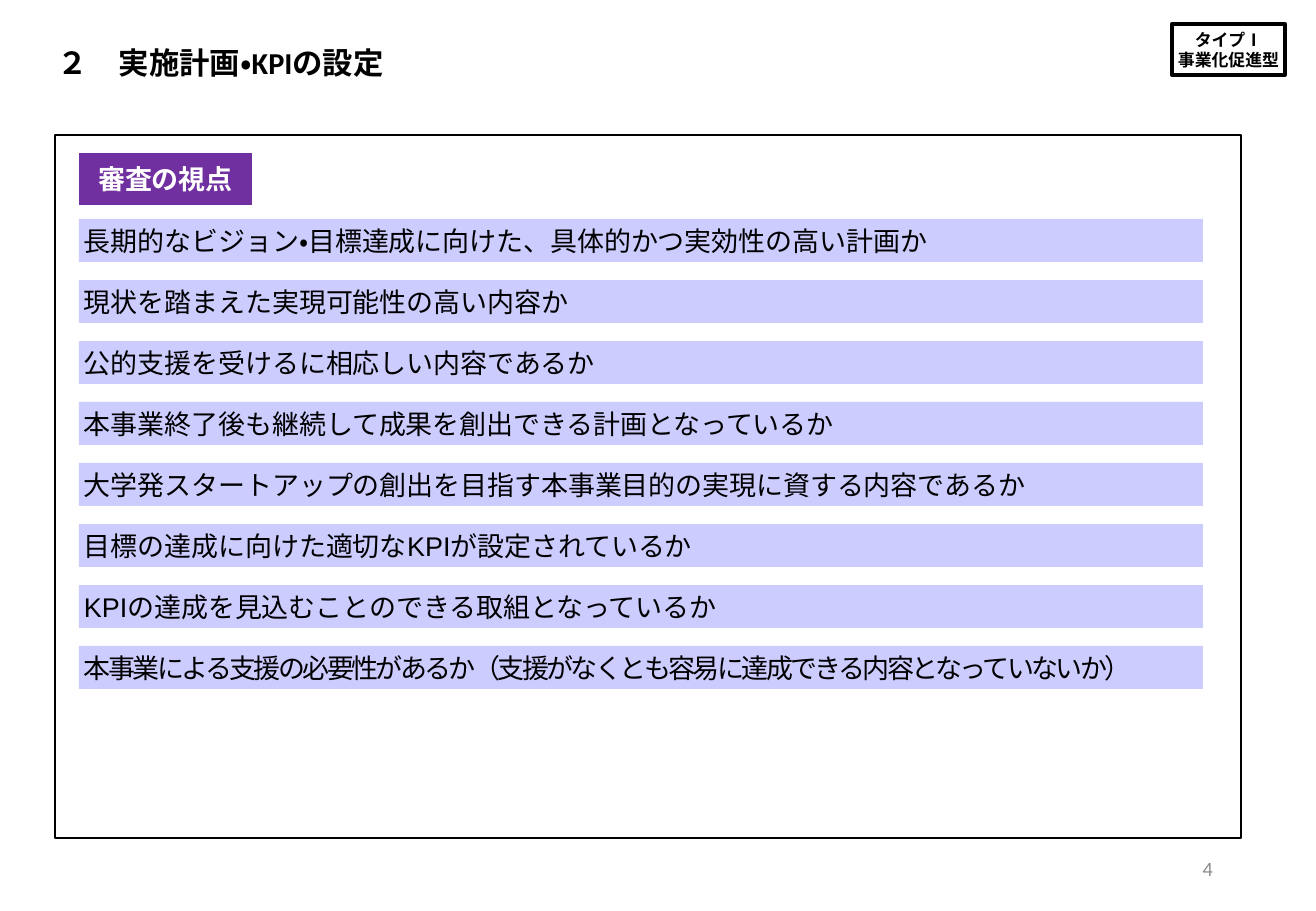
from pptx import Presentation
from pptx.dml.color import RGBColor
from pptx.enum.lang import MSO_LANGUAGE_ID
from pptx.enum.shapes import MSO_SHAPE
from pptx.enum.text import MSO_ANCHOR, PP_ALIGN
from pptx.util import Emu, Pt

PX = 7526
BLACK = RGBColor(0x00, 0x00, 0x00)
WHITE = RGBColor(0xFF, 0xFF, 0xFF)
GRAY = RGBColor(0x8C, 0x8C, 0x8C)
PURPLE = RGBColor(0x70, 0x30, 0xA0)
LAVENDER = RGBColor(0xCC, 0xCC, 0xFF)

ROW_LEFT, ROW_TOP, ROW_WIDTH, ROW_HEIGHT, ROW_PITCH = 79, 219, 1124, 43, 61
CRITERIA = [
    ("長期的なビジョン・目標達成に向けた、具体的かつ実効性の高い計画か", "Calibri", 0),
    ("現状を踏まえた実現可能性の高い内容か", "Arial", 0),
    ("公的支援を受けるに相応しい内容であるか", "Arial", 0),
    ("本事業終了後も継続して成果を創出できる計画となっているか", "Calibri", 0),
    ("大学発スタートアップの創出を目指す本事業目的の実現に資する内容であるか", "Arial", 0),
    ("目標の達成に向けた適切なKPIが設定されているか", "Arial", 0),
    ("KPIの達成を見込むことのできる取組となっているか", "Arial", 0),
    ("本事業による支援の必要性があるか（支援がなくとも容易に達成できる内容となっていないか）", "Arial", -150),
]


def px(*lengths):
    return [Emu(n * PX) for n in lengths]


def write(sp, lines, size, font="Arial", color=BLACK, bold=False,
          align=PP_ALIGN.LEFT, inset=5, spacing=0):
    tf = sp.text_frame
    tf.word_wrap = True
    tf.vertical_anchor = MSO_ANCHOR.MIDDLE
    tf.margin_left, tf.margin_right, tf.margin_top, tf.margin_bottom = px(inset, inset, 5, 5)
    for i, line in enumerate(lines):
        p = tf.add_paragraph() if i else tf.paragraphs[0]
        p.alignment = align
        r = p.add_run()
        r.text = line
        r.font.name = font
        r.font.size = Pt(size)
        r.font.bold = bold
        r.font.color.rgb = color
        r.font.language_id = MSO_LANGUAGE_ID.JAPANESE
        if spacing:
            r.font._element.set("spc", str(spacing))


def add_box(s, left, top, width, height, fill=None, line_width=0):
    sp = s.shapes.add_shape(MSO_SHAPE.RECTANGLE, *px(left, top, width, height))
    sp.shadow.inherit = False
    if fill is None:
        sp.fill.background()
    else:
        sp.fill.solid()
        sp.fill.fore_color.rgb = fill
    if line_width:
        sp.line.color.rgb = BLACK
        sp.line.width = Pt(line_width)
    else:
        sp.line.fill.background()
    return sp


def add_text(s, left, top, width, height):
    return s.shapes.add_textbox(*px(left, top, width, height))


def add_criteria(s):
    for i, (text, font, spacing) in enumerate(CRITERIA):
        row = add_box(s, ROW_LEFT, ROW_TOP + i * ROW_PITCH, ROW_WIDTH, ROW_HEIGHT, LAVENDER)
        write(row, [text], 16, font, spacing=spacing)


def main():
    prs = Presentation()
    prs.slide_width, prs.slide_height = px(1316, 911)
    s = prs.slides.add_slide(prs.slide_layouts[6])

    badge = add_box(s, 1172, 24, 113, 51, line_width=2.25)
    write(badge, ["タイプⅠ", "事業化促進型"], 10, bold=True, align=PP_ALIGN.CENTER)

    title = add_text(s, 53, 39, 492, 46)
    write(title, ["２　実施計画・KPIの設定"], 18, "Calibri", bold=True)

    add_box(s, 55, 135, 1186, 703, WHITE, 1)
    heading = add_box(s, 79, 153, 173, 52, PURPLE)
    write(heading, ["審査の視点"], 16, color=WHITE, bold=True, align=PP_ALIGN.CENTER)
    add_criteria(s)

    page_number = add_text(s, 929, 844, 296, 49)
    write(page_number, ["4"], 12, "Calibri", GRAY, align=PP_ALIGN.RIGHT, inset=12)

    prs.save("out.pptx")


if __name__ == "__main__":
    main()
